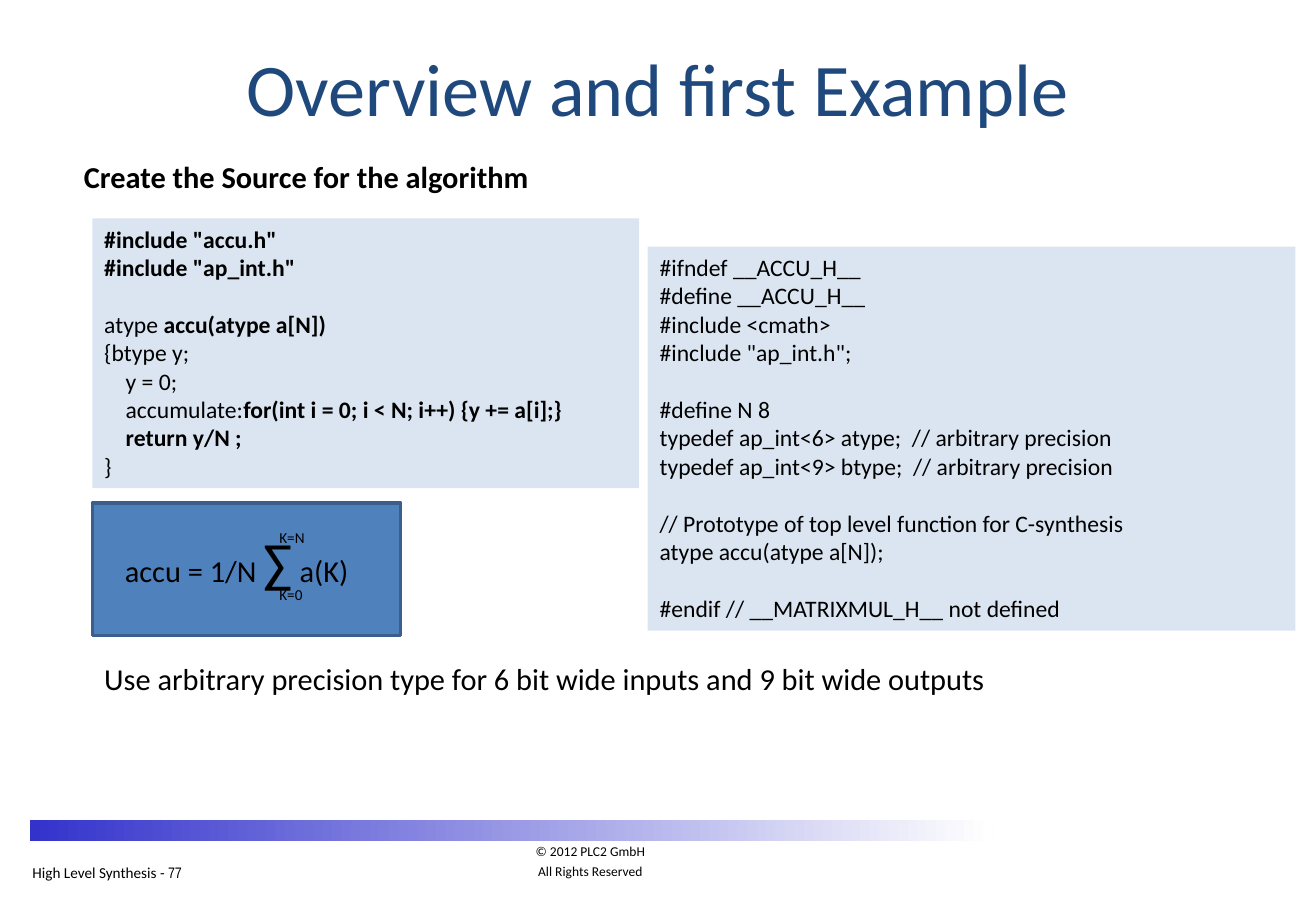
from dataclasses import dataclass

from lxml.etree import SubElement
from pptx import Presentation
from pptx.dml.color import RGBColor
from pptx.enum.shapes import MSO_SHAPE
from pptx.enum.text import MSO_ANCHOR, MSO_AUTO_SIZE, PP_ALIGN
from pptx.oxml.ns import qn
from pptx.util import Cm, Pt


@dataclass(frozen=True)
class Theme:
    font: str = "Calibri"
    number_font: str = "Arial Narrow"
    text: str = "000000"
    title: str = "1F497D"
    panel: str = "4F81BD"
    panel_line: str = "3A5F8C"
    bar_start: str = "3333CC"
    bar_end: str = "FFFFFF"
    title_size: int = 44
    sum_size: int = 32
    body_size: int = 18
    code_size: int = 14
    small_size: int = 9
    copyright_size: int = 8


THEME = Theme()

# Each block is a list of lines; a line is its regular part, then its bold part
SOURCE_CODE = [
    [("", '#include "accu.h"'),
     ("", '#include "ap_int.h"')],
    [("atype ", "accu(atype a[N])"),
     ("{btype y;", ""),
     ("    y = 0;", ""),
     ("    accumulate:", "for(int i = 0; i < N; i++) {y += a[i];}"),
     ("    ", "return y/N ;"),
     ("}", "")],
]
HEADER_CODE = [
    [("#ifndef __ACCU_H__", ""),
     ("#define __ACCU_H__", ""),
     ("#include <cmath>", ""),
     ('#include "ap_int.h";', "")],
    [("#define N 8", ""),
     ("typedef ap_int<6> atype;  // arbitrary precision", ""),
     ("typedef ap_int<9> btype;  // arbitrary precision", "")],
    [("// Prototype of top level function for C-synthesis", ""),
     ("atype accu(atype a[N]);", "")],
    [("#endif // __MATRIXMUL_H__ not defined", "")],
]


def rgb(value):
    return RGBColor.from_string(value)


def write(tf, *runs, size=THEME.body_size, color=THEME.text, align=PP_ALIGN.LEFT,
          bold=False, before=0, spacing=1.0):
    """Add one paragraph; a run is text, or text with its own format."""
    p = tf.paragraphs[0]
    if p.runs:
        p = tf.add_paragraph()
    p.alignment, p.line_spacing, p.space_before = align, spacing, Pt(before)
    for run in runs:
        text, own = (run, {}) if isinstance(run, str) else run
        if not text:
            continue
        r = p.add_run()
        r.text = text
        r.font.name = own.get("font", THEME.font)
        r.font.size = Pt(own.get("size", size))
        r.font.bold = own.get("bold", bold)
        r.font.color.rgb = rgb(color)
    return p


def place(sp, box):
    sp.left, sp.top, sp.width, sp.height = (Cm(v) for v in box)


def frame(sp, wrap=True):
    tf = sp.text_frame
    tf.word_wrap = wrap
    tf.auto_size = MSO_AUTO_SIZE.NONE
    tf.vertical_anchor = MSO_ANCHOR.TOP
    return tf


def text_box(shapes, box, wrap=True):
    return frame(shapes.add_textbox(*(Cm(v) for v in box)), wrap)


def rectangle(s, box):
    sp = s.shapes.add_shape(MSO_SHAPE.RECTANGLE, *(Cm(v) for v in box))
    sp.shadow.inherit = False
    sp.line.fill.background()
    return sp


def footer(s, box):
    x, y, _, _ = box
    # Gradient bar
    bar = rectangle(s, (x + 0.2, y, 20.12, 0.43))
    bar.fill.gradient()
    bar.fill.gradient_angle = 0
    for stop, color in zip(bar.fill.gradient_stops, (THEME.bar_start, THEME.bar_end)):
        stop.color.rgb = rgb(color)
    # Course name and page number
    write(text_box(s.shapes, (x, y + 0.83, 11, 0.58)), "High Level Synthesis - ",
          ("77", {"font": THEME.number_font}), size=THEME.small_size, spacing=0.9)
    # Copyright
    tf = text_box(s.shapes, (x + 10.52, y + 0.43, 2.79, 0.97), wrap=False)
    for text, before in (("© 2012 PLC2 GmbH", 0), ("All Rights Reserved", 4)):
        write(tf, text, size=THEME.copyright_size, align=PP_ALIGN.CENTER,
              before=before, spacing=0.8)


def headings(s, box):
    x, y, w, h = box
    title, body = s.shapes.title, s.placeholders[1]
    place(title, (x, y, w, h))
    write(frame(title), "Overview and first Example", size=THEME.title_size,
          color=THEME.title, align=PP_ALIGN.CENTER)
    place(body, (x + 0.13, y + 2.42, 17.2, 1.02))
    tf = frame(body)
    pPr = tf.paragraphs[0]._p.get_or_add_pPr()
    pPr.set("marL", str(Cm(0.95)))
    pPr.set("indent", str(-Cm(0.95)))
    SubElement(pPr, qn("a:buNone"))
    write(tf, "Create the Source for the algorithm", bold=True)


def formula(s, box):
    x, y, w, h = box
    panel = rectangle(s, box)
    panel.fill.solid()
    panel.fill.fore_color.rgb = rgb(THEME.panel)
    panel.line.color.rgb = rgb(THEME.panel_line)
    panel.line.width = Pt(2)
    # Sum with its limits
    shapes = s.shapes.add_group_shape().shapes
    write(text_box(shapes, (x + 0.43, y + 0.4, w - 0.43, 1.63)),
          "accu = 1/N ", ("∑", {"size": THEME.sum_size}), " a(K)")
    for text, offset in (("K=0", 1.6), ("K=N", 0.4)):
        write(text_box(shapes, (x + 3.66, y + offset, 1.73, 0.64)), text,
              size=THEME.small_size)


def code_panel(s, box, blocks):
    panel = rectangle(s, box)
    panel.fill.solid()
    panel.fill.fore_color.rgb = rgb(THEME.panel)
    color = panel.fill._xPr.find(qn("a:solidFill"))[0]
    SubElement(color, qn("a:alpha"), val="20000")
    tf = frame(panel)
    for b, block in enumerate(blocks):
        for n, (regular, strong) in enumerate(block):
            gap = 17 if b and not n else 0
            write(tf, regular, (strong, {"bold": True}), size=THEME.code_size, before=gap)


def note(s, box):
    write(text_box(s.shapes, box),
          "Use arbitrary precision type for 6 bit wide inputs and 9 bit wide outputs")


def main():
    prs = Presentation()
    prs.slide_width, prs.slide_height = Cm(27.51), Cm(19.05)
    s = prs.slides.add_slide(prs.slide_layouts[1])
    footer(s, (0.43, 17.15, 20.32, 1.41))
    headings(s, (1.37, 0.76, 24.77, 3.18))
    formula(s, (1.93, 10.52, 6.45, 2.77))
    code_panel(s, (1.93, 4.57, 11.43, 5.64), SOURCE_CODE)
    code_panel(s, (13.54, 5.16, 13.54, 8.03), HEADER_CODE)
    note(s, (1.93, 13.69, 25.15, 1.02))
    prs.save("out.pptx")


if __name__ == "__main__":
    main()
